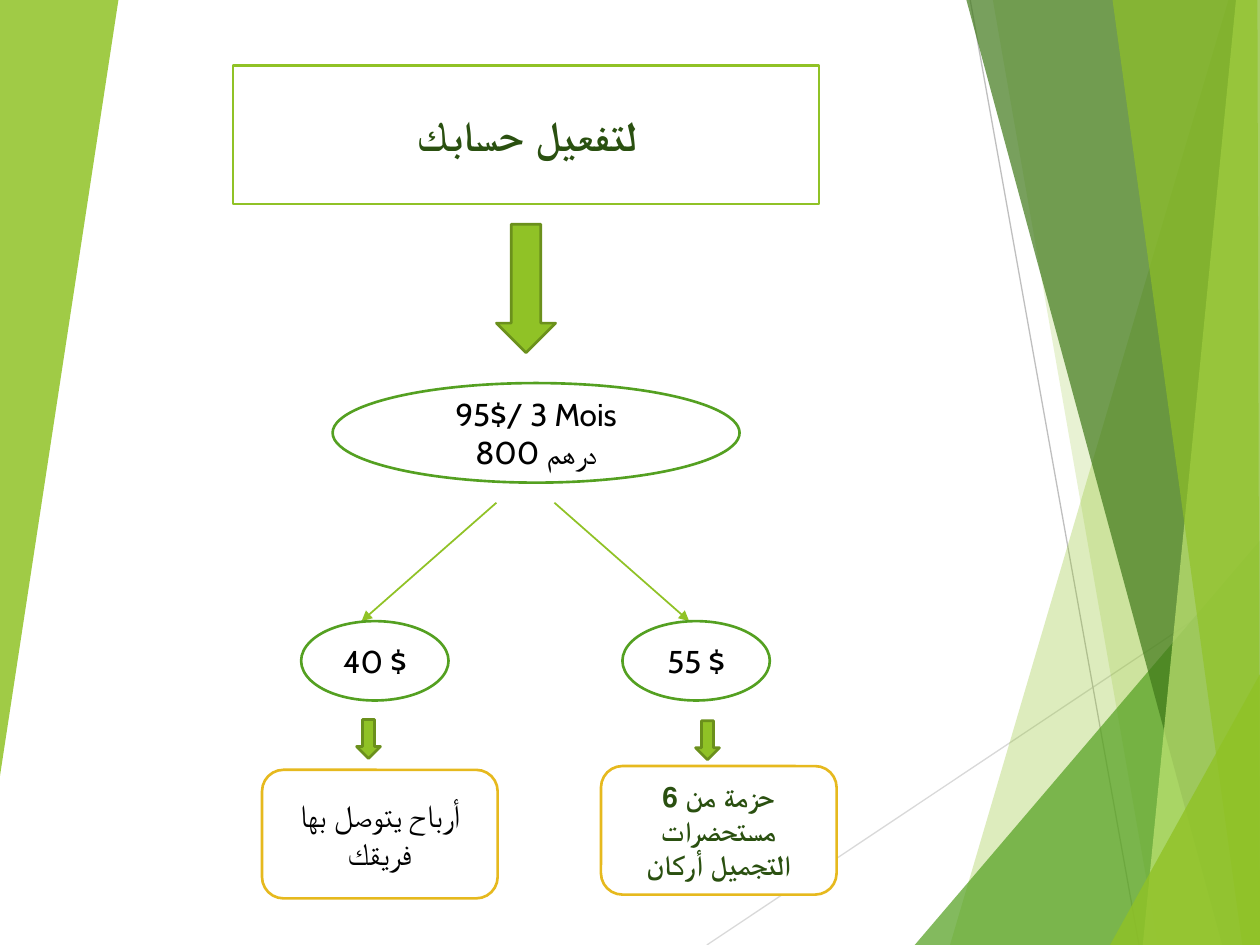
"""Builds the account activation flow slide."""
from typing import NamedTuple

from lxml import etree
from pptx import Presentation
from pptx.dml.color import RGBColor
from pptx.enum.shapes import MSO_CONNECTOR, MSO_SHAPE
from pptx.enum.text import MSO_ANCHOR, PP_ALIGN
from pptx.oxml.ns import qn
from pptx.util import Inches, Pt

ROUNDED, ELLIPSE, DOWN = MSO_SHAPE.ROUNDED_RECTANGLE, MSO_SHAPE.OVAL, MSO_SHAPE.DOWN_ARROW
STRAIGHT, CENTER, MIDDLE = MSO_CONNECTOR.STRAIGHT, PP_ALIGN.CENTER, MSO_ANCHOR.MIDDLE
LIME, GREEN, GOLD, OLIVE = "90C226", "54A021", "E6B91E", "6B901C"
WHITE, BLACK, DARK = "FFFFFF", "000000", "2A5010"
FONT = "Cabin"
TITLE_ONLY = 5


class Facet(NamedTuple):
    points: list[tuple[float, float]]
    color: str
    opacity: int


class Link(NamedTuple):
    start: tuple[float, float]
    end: tuple[float, float]
    color: str
    width: float
    arrow: bool = False


class Step(NamedTuple):
    kind: MSO_SHAPE
    box: tuple[float, float, float, float]
    border: str
    lines: tuple[str, ...] = ()
    size: int = 18
    color: str = BLACK
    bold: bool = False
    fill: str = WHITE


RAYS = [
    Link((5.61, 7.5), (10, 4.57), "D9D9D9", 0.75),
    Link((7.7, 0), (9.04, 7.5), "BFBFBF", 0.75),
]
FACETS = [
    Facet([(9.75, 0), (7.54, 7.5), (10, 7.5), (10, 0)], LIME, 30),
    Facet([(7.88, 0), (9.19, 7.5), (10, 7.5), (10, 0)], LIME, 20),
    Facet([(7.26, 7.5), (10, 4.29), (10, 7.5)], GREEN, 72),
    Facet([(7.67, 0), (9.7, 7.5), (10, 7.5), (10, 0)], "3F7819", 70),
    Facet([(9.81, 0), (9.07, 7.5), (10, 7.5), (10, 0)], "C0E474", 70),
    Facet([(8.83, 0), (9.86, 7.5), (10, 7.5), (9.98, 0)], LIME, 65),
    Facet([(8.81, 7.5), (10, 5.35), (10, 7.5)], LIME, 80),
    Facet([(0, 0), (0.94, 0), (0, 6.16)], LIME, 85),
]
HEADING = Step(ROUNDED, (1.85, 0.52, 4.65, 1.1), LIME, ("لتفعيل حسابك",), 24, DARK, True)
STEPS = [
    Step(DOWN, (3.94, 1.78, 0.47, 1.02), OLIVE, fill=LIME),
    Step(ELLIPSE, (2.64, 3.04, 3.23, 0.79), GREEN, ("95$/ 3 Mois", "800 درهم")),
    Step(ELLIPSE, (4.94, 4.93, 1.17, 0.63), GREEN, ("55 $",)),
    Step(ELLIPSE, (2.39, 4.93, 1.17, 0.63), GREEN, ("40 $",)),
    Step(DOWN, (5.52, 5.72, 0.19, 0.31), OLIVE, fill=LIME),
    Step(DOWN, (2.83, 5.71, 0.19, 0.31), OLIVE, fill=LIME),
    Step(ROUNDED, (4.77, 6.08, 1.87, 1.02), GOLD,
         ("حزمة من 6 مستحضرات التجميل أركان",), 16, DARK, True),
    Step(ROUNDED, (2.08, 6.11, 1.87, 1.02), GOLD, ("أرباح يتوصل بها فريقك",)),
]
BRANCHES = [
    Link((4.4, 3.99), (5.47, 4.93), LIME, 1, True),
    Link((3.94, 3.99), (2.87, 4.93), LIME, 1, True),
]


def rgb(value: str) -> RGBColor:
    """Turn a hex string into a colour."""
    return RGBColor.from_string(value)


def draw_facet(slide, facet: Facet) -> None:
    """Draw one translucent background facet."""
    corners = [(round(x * 100), round(y * 100)) for x, y in facet.points]
    builder = slide.shapes.build_freeform(*corners[0], scale=Inches(0.01))
    builder.add_line_segments(corners[1:], close=True)
    shape = builder.convert_to_shape()
    shape.shadow.inherit = False
    shape.line.fill.background()
    shape.fill.solid()
    shape.fill.fore_color.rgb = rgb(facet.color)
    tint = shape._element.spPr.find(f"{qn('a:solidFill')}/{qn('a:srgbClr')}")
    etree.SubElement(tint, qn("a:alpha"), val=str(facet.opacity * 1000))


def draw_link(slide, link: Link) -> None:
    """Draw a straight line, with an arrowhead if asked."""
    ends = [Inches(value) for value in link.start + link.end]
    connector = slide.shapes.add_connector(STRAIGHT, *ends)
    connector.line.color.rgb = rgb(link.color)
    connector.line.width = Pt(link.width)
    properties = connector._element.spPr
    if link.arrow:
        etree.SubElement(properties.find(qn("a:ln")), qn("a:tailEnd"), type="triangle")
    etree.SubElement(properties, qn("a:effectLst"))


def format_step(shape, step: Step) -> None:
    """Apply the fill, border and text of a step."""
    shape.shadow.inherit = False
    shape.fill.solid()
    shape.fill.fore_color.rgb = rgb(step.fill)
    shape.line.color.rgb = rgb(step.border)
    shape.line.width = Pt(1.5)
    frame = shape.text_frame
    frame.word_wrap = True
    frame.vertical_anchor = MIDDLE
    for index, line in enumerate(step.lines):
        paragraph = frame.add_paragraph() if index else frame.paragraphs[0]
        paragraph.alignment = CENTER
        run = paragraph.add_run()
        run.text = line
        run.font.name = FONT
        run.font.size = Pt(step.size)
        run.font.bold = step.bold
        run.font.color.rgb = rgb(step.color)


def draw_step(slide, step: Step) -> None:
    """Add a preset shape for a step."""
    shape = slide.shapes.add_shape(step.kind, *map(Inches, step.box))
    format_step(shape, step)


def place_heading(slide, heading: Step) -> None:
    """Turn the title placeholder into the rounded heading."""
    title = slide.shapes.title
    title.left, title.top, title.width, title.height = map(Inches, heading.box)
    outline = etree.SubElement(title._element.spPr, qn("a:prstGeom"), prst="roundRect")
    etree.SubElement(outline, qn("a:avLst"))
    format_step(title, heading)


def main() -> None:
    """Build and save the slide."""
    deck = Presentation()
    deck.slide_width, deck.slide_height = Inches(10), Inches(7.5)
    slide = deck.slides.add_slide(deck.slide_layouts[TITLE_ONLY])
    place_heading(slide, HEADING)
    for ray in RAYS:
        draw_link(slide, ray)
    for facet in FACETS:
        draw_facet(slide, facet)
    for branch in BRANCHES:
        draw_link(slide, branch)
    for step in STEPS:
        draw_step(slide, step)
    deck.save("out.pptx")


if __name__ == "__main__":
    main()
